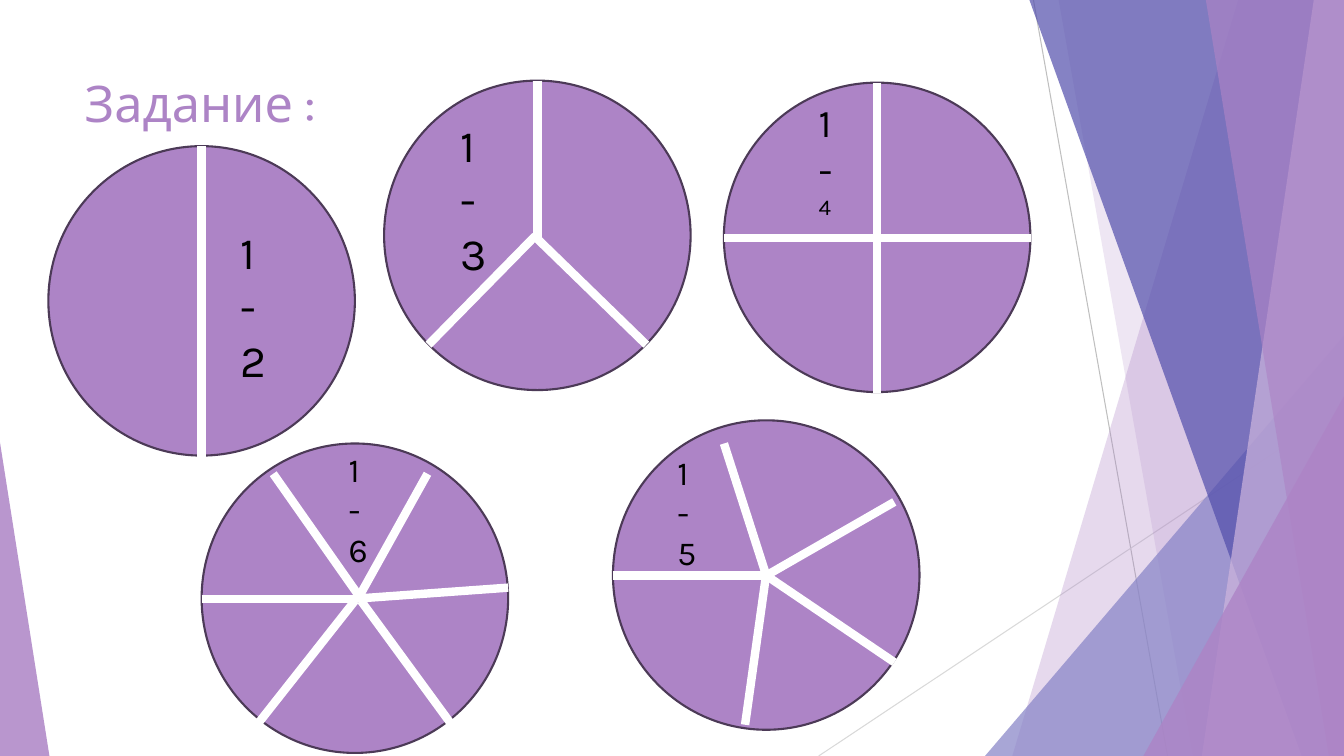
from dataclasses import dataclass

from lxml.etree import SubElement
from pptx import Presentation
from pptx.dml.color import RGBColor
from pptx.enum.shapes import MSO_CONNECTOR, MSO_SHAPE
from pptx.enum.text import MSO_ANCHOR, MSO_AUTO_SIZE, PP_ALIGN
from pptx.oxml.ns import qn
from pptx.util import Inches, Pt

PURPLE = RGBColor(0xAD, 0x84, 0xC6)
LILAC = RGBColor(0xCE, 0xB5, 0xDD)
PERIWINKLE = RGBColor(0x87, 0x84, 0xC7)
INDIGO = RGBColor(0x52, 0x4E, 0xAB)
OUTLINE = RGBColor(0x4C, 0x3A, 0x57)
GRAY = RGBColor(0xBF, 0xBF, 0xBF)
PALE_GRAY = RGBColor(0xD9, 0xD9, 0xD9)
WHITE = RGBColor(0xFF, 0xFF, 0xFF)
BLACK = RGBColor(0, 0, 0)
FONT = "Karla"
WIDTH, HEIGHT = 13.33, 7.5
PIE_WIDTH, PIE_HEIGHT = 3.04, 3.07

Point = tuple[float, float]


@dataclass
class Band:
    top_left: float
    bottom_left: float
    bottom_right: float
    color: RGBColor
    opacity: int


@dataclass
class Corner:
    left: float
    top: float
    width: float
    apex: float
    color: RGBColor
    opacity: int


@dataclass
class Pie:
    left: float
    top: float
    cuts: list[tuple[Point, Point]]
    label_at: Point
    label_height: float
    denominator: str
    size: int
    denominator_size: int


BACK_BANDS = [
    Band(12.28, 10.04, WIDTH, PURPLE, 30),
    Band(10.5, 11.83, WIDTH, PURPLE, 20),
]
FRONT_BANDS = [
    Band(10.21, 12.91, WIDTH, INDIGO, 70),
    Band(13.03, 11.92, WIDTH, LILAC, 70),
    Band(11.96, 13.18, WIDTH, PURPLE, 65),
]
BLUE_CORNER = Corner(9.77, 3.33, 3.56, 1, PERIWINKLE, 72)
FRONT_CORNERS = [
    Corner(11.34, 3.93, 1.99, 1, PURPLE, 80),
    Corner(0, 4.39, 0.49, 0, PURPLE, 85),
]
PIES = [
    Pie(0.48, 1.45, [((2, 1.45), (2, 4.53))], (2.29, 2.18), 1.72, "2", 32, 32),
    Pie(7.18, 0.82, [((8.7, 0.82), (8.7, 3.9)), ((10.23, 2.36), (7.18, 2.36))],
        (8.02, 0.93), 1.35, "4", 28, 16),
    Pie(3.81, 0.8, [((5.33, 0.8), (5.33, 2.4)), ((5.31, 2.34), (4.25, 3.42)),
                    ((6.41, 3.42), (5.33, 2.37))],
        (4.47, 1.12), 1.72, "3", 32, 32),
    Pie(2, 4.4, [((2.71, 4.7), (3.58, 5.94)), ((2, 5.94), (3.52, 5.94)),
                 ((2.55, 7.19), (3.52, 5.96)), ((4.24, 4.7), (3.55, 5.94)),
                 ((5.04, 5.83), (3.52, 5.94)), ((4.48, 7.19), (3.58, 5.96))],
        (3.36, 4.4), 1.31, "6", 24, 24),
    Pie(6.08, 4.17, [((7.6, 5.71), (6.08, 5.71)), ((7.6, 5.71), (7.18, 4.4)),
                     ((7.6, 5.71), (8.87, 4.98)), ((7.39, 7.19), (7.6, 5.69)),
                     ((7.6, 5.71), (8.87, 6.57))],
        (6.62, 4.43), 1.31, "5", 24, 24),
]


def apply_format(target, values: dict) -> None:
    for name, value in values.items():
        setattr(target, name, value)


def format_font(font, size: int, color: RGBColor) -> None:
    apply_format(font, {"name": FONT, "size": Pt(size)})
    font.color.rgb = color


def fill_shape(shape, color: RGBColor, opacity: int = 100) -> None:
    shape.shadow.inherit = False
    shape.fill.solid()
    shape.fill.fore_color.rgb = color
    if opacity < 100:
        tint = shape.fill._xPr.find(qn("a:solidFill"))[0]
        SubElement(tint, qn("a:alpha")).set("val", str(opacity * 1000))


def draw_line(shapes, start: Point, end: Point, color: RGBColor, weight: float) -> None:
    line = shapes.add_connector(MSO_CONNECTOR.STRAIGHT, *map(Inches, start + end))
    line.line.color.rgb = color
    line.line.width = Pt(weight)
    SubElement(line._element.spPr, qn("a:effectLst"))


def draw_band(shapes, band: Band) -> None:
    outline = [(band.top_left, 0), (WIDTH, 0), (band.bottom_right, HEIGHT),
               (band.bottom_left, HEIGHT)]
    if band.bottom_left > band.top_left:
        outline[2] = (WIDTH, HEIGHT)
        outline[3] = (band.bottom_right if band.bottom_right < WIDTH
                      else band.bottom_left, HEIGHT)
    corners = [(Inches(x), Inches(y)) for x, y in outline]
    builder = shapes.build_freeform(*corners[0])
    builder.add_line_segments(corners[1:], close=True)
    shape = builder.convert_to_shape()
    fill_shape(shape, band.color, band.opacity)
    shape.line.fill.background()


def draw_corner(shapes, corner: Corner) -> None:
    box = (corner.left, corner.top, corner.width, HEIGHT - corner.top)
    shape = shapes.add_shape(MSO_SHAPE.ISOSCELES_TRIANGLE, *map(Inches, box))
    shape.adjustments[0] = corner.apex
    fill_shape(shape, corner.color, corner.opacity)
    shape.line.fill.background()


def draw_pie(shapes, pie: Pie) -> None:
    box = (pie.left, pie.top, PIE_WIDTH, PIE_HEIGHT)
    circle = shapes.add_shape(MSO_SHAPE.OVAL, *map(Inches, box))
    fill_shape(circle, PURPLE)
    circle.line.color.rgb = OUTLINE
    circle.line.width = Pt(1.5)
    for start, end in pie.cuts:
        draw_line(shapes, start, end, WHITE, 6)


def write_fraction(shapes, pie: Pie) -> None:
    box = (*pie.label_at, 0.86, pie.label_height)
    frame = shapes.add_textbox(*map(Inches, box)).text_frame
    apply_format(frame, {"word_wrap": True, "auto_size": MSO_AUTO_SIZE.SHAPE_TO_FIT_TEXT,
                         "text": f"1\n-\n{pie.denominator}"})
    sizes = (pie.size, pie.size, pie.denominator_size)
    for paragraph, size in zip(frame.paragraphs, sizes):
        format_font(paragraph.runs[0].font, size, BLACK)


def write_title(title) -> None:
    apply_format(title, {"left": Inches(0.74), "top": Inches(0.67),
                         "width": Inches(7.26), "height": Inches(0.89)})
    frame = title.text_frame
    apply_format(frame, {"text": "Задание :", "vertical_anchor": MSO_ANCHOR.TOP,
                         "word_wrap": True})
    heading = frame.paragraphs[0]
    heading.alignment = PP_ALIGN.LEFT
    format_font(heading.runs[0].font, 36, PURPLE)


def main() -> None:
    deck = Presentation()
    apply_format(deck, {"slide_width": Inches(WIDTH), "slide_height": Inches(HEIGHT)})
    shapes = deck.slides.add_slide(deck.slide_layouts[5]).shapes
    draw_line(shapes, (10.25, 0), (11.58, HEIGHT), GRAY, 0.75)
    draw_line(shapes, (WIDTH, 4.03), (8.12, HEIGHT), PALE_GRAY, 0.75)
    for band in BACK_BANDS:
        draw_band(shapes, band)
    draw_corner(shapes, BLUE_CORNER)
    for band in FRONT_BANDS:
        draw_band(shapes, band)
    for corner in FRONT_CORNERS:
        draw_corner(shapes, corner)
    write_title(shapes.title)
    for pie in PIES:
        draw_pie(shapes, pie)
        write_fraction(shapes, pie)
    deck.save("out.pptx")


if __name__ == "__main__":
    main()
